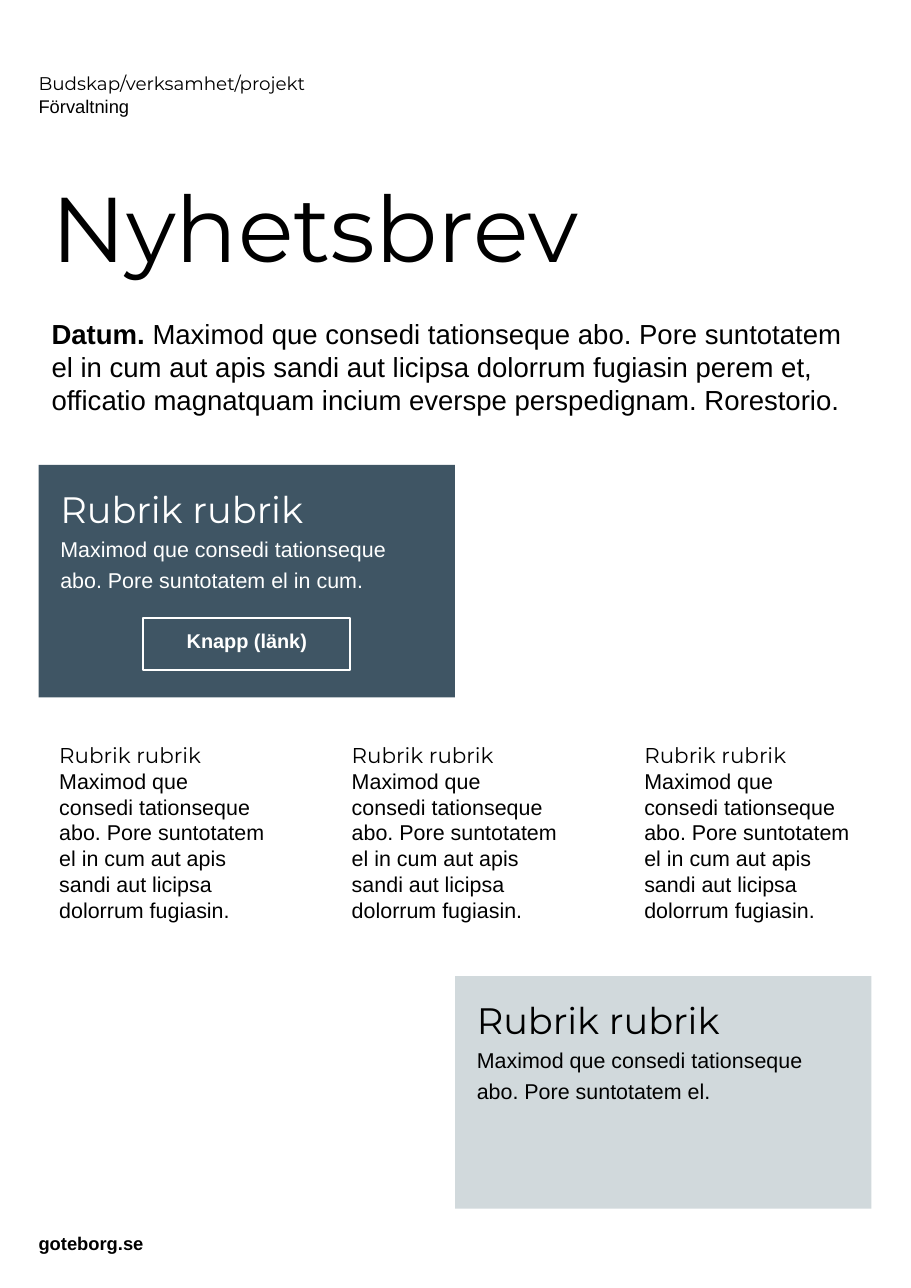
"""Build a one-page newsletter with a lead, two cards and three columns."""
from pptx import Presentation
from pptx.dml.color import RGBColor
from pptx.enum import shapes, text
from pptx.util import Pt

BLACK = RGBColor(0x00, 0x00, 0x00)
WHITE = RGBColor(0xFF, 0xFF, 0xFF)
SLATE = RGBColor(0x3F, 0x55, 0x64)
MIST = RGBColor(0xD1, 0xD9, 0xDC)
HEADING, BODY = "Montserrat", "Arial"
MARGIN = 25.2
CARD_WIDTH, CARD_HEIGHT = 272.2, 152

newsletter = Presentation()
newsletter.slide_width, newsletter.slide_height = Pt(595.44), Pt(841.68)
page = newsletter.slides.add_slide(newsletter.slide_layouts[6])


def add_text(paragraphs, left, top, width, height, inset=0, color=BLACK, fill=None,
             line=None, middle=False, align=text.PP_ALIGN.LEFT):
    """Place paragraphs given as (runs, line spacing), runs as (words, font, size, bold)."""
    place = [Pt(value) for value in (left, top, width, height)]
    if fill or line:
        box = page.shapes.add_shape(shapes.MSO_SHAPE.RECTANGLE, *place)
        box.shadow.inherit = False
    else:
        box = page.shapes.add_textbox(*place)
    if fill:
        box.fill.solid()
        box.fill.fore_color.rgb = fill
    else:
        box.fill.background()
    if line:
        box.line.color.rgb = line
        box.line.width = Pt(1.5)
    else:
        box.line.fill.background()
    frame = box.text_frame
    frame.word_wrap = True
    frame.margin_left = frame.margin_top = frame.margin_right = frame.margin_bottom = Pt(inset)
    frame.vertical_anchor = text.MSO_ANCHOR.MIDDLE if middle else text.MSO_ANCHOR.TOP
    for index, (runs, spacing) in enumerate(paragraphs):
        paragraph = frame.add_paragraph() if index else frame.paragraphs[0]
        paragraph.alignment = align
        paragraph.line_spacing = spacing
        for words, font, size, bold in runs:
            run = paragraph.add_run()
            run.text = words
            run.font.name, run.font.size, run.font.bold = font, Pt(size), bold
            run.font.color.rgb = color


add_text([([("Budskap/verksamhet/projekt", HEADING, 12, False)], Pt(15.2)),
          ([("Förvaltning", BODY, 12, False)], Pt(15.2))],
         MARGIN, 49, 397.4, 24.5, middle=True)

add_text([([("Nyhetsbrev", HEADING, 60, False)], 0.9)],
         MARGIN, 104.4, 542.9, 95, inset=8.5, middle=True)

lead = ("Maximod que consedi tationseque abo. Pore suntotatem el in cum aut apis sandi aut "
        "licipsa dolorrum fugiasin perem et, officatio magnatquam incium everspe "
        "perspedignam. Rorestorio.")
add_text([([("Datum. ", BODY, 18, True), (lead, BODY, 18, False)], 1.0)],
         MARGIN, 198.7, 542.9, 89.3, inset=8.5)

cards = [
    (MARGIN, 303.8, SLATE, WHITE, "Maximod que consedi tationseque abo. Pore suntotatem el in cum."),
    (MARGIN + CARD_WIDTH, 637.9, MIST, BLACK, "Maximod que consedi tationseque abo. Pore suntotatem el."),
]
for left, top, fill, color, summary in cards:
    add_text([([("Rubrik rubrik", HEADING, 24, False)], 1.0),
              ([(summary, BODY, 14, False)], 1.2)],
             left, top, CARD_WIDTH, CARD_HEIGHT, inset=14.2, color=color, fill=fill)

add_text([([("Knapp (länk)", BODY, 13, True)], 0.7)],
         93.6, 403.9, 135.4, 33.8, inset=11.3, color=WHITE, line=WHITE, middle=True,
         align=text.PP_ALIGN.CENTER)

article = ("Maximod que consedi tationseque abo. Pore suntotatem el in cum aut apis sandi aut "
           "licipsa dolorrum fugiasin.")
for column in range(3):
    add_text([([("Rubrik rubrik", HEADING, 14, False)], 1.0),
              ([(article, BODY, 14, False)], 1.0)],
             24.5 + column * 191.2, 470.9, 164.2, 152, inset=14.2)

add_text([([("goteborg.se", BODY, 12, True)], 1.0)],
         MARGIN, 806.4, 373, 12.2, middle=True)

newsletter.save("out.pptx")
